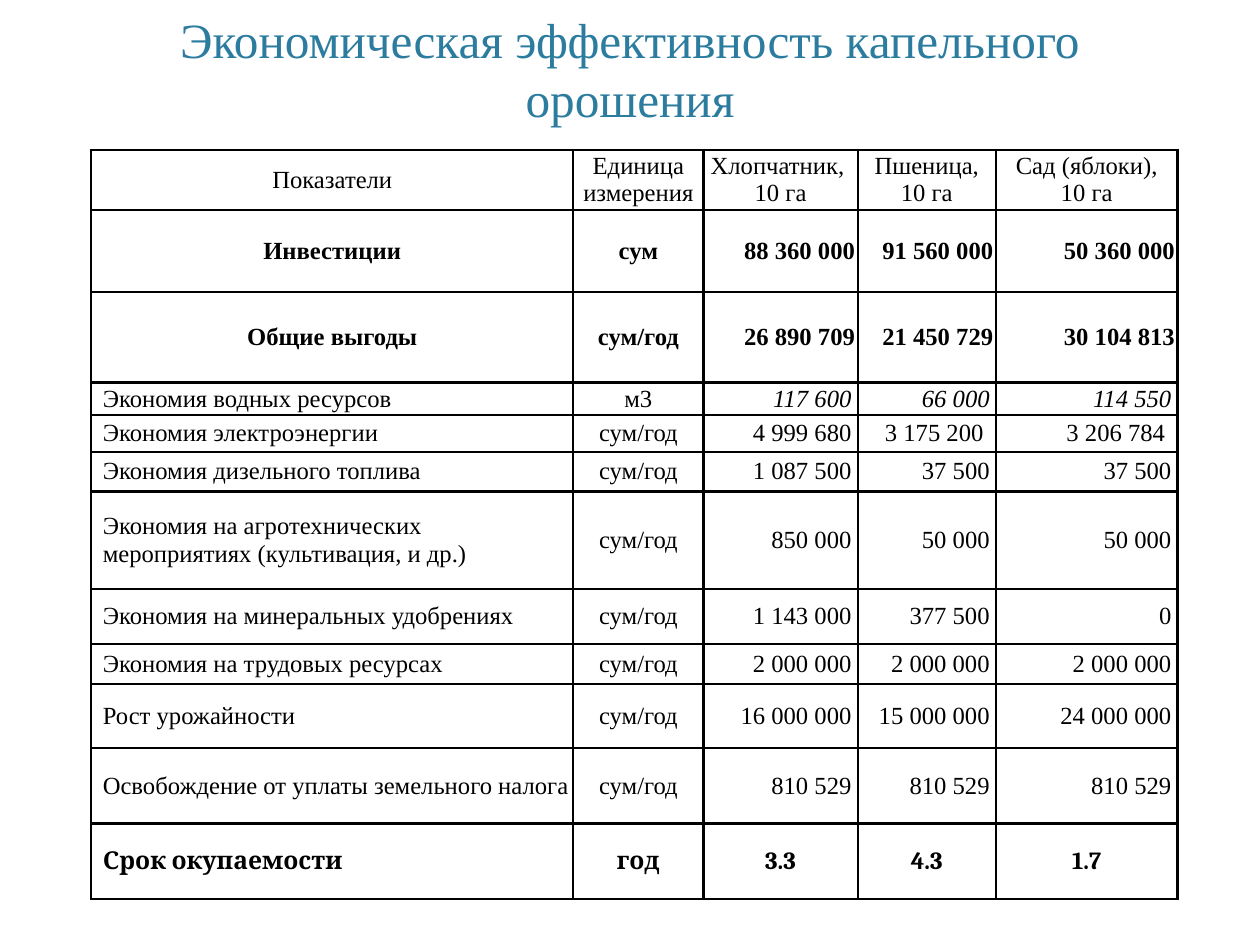
import pptx
import pptx.dml.color
import pptx.enum.text
import pptx.oxml
import pptx.oxml.ns
import pptx.util
from pptx.util import Inches

ALIGN = pptx.enum.text.PP_ALIGN
ANCHOR = pptx.enum.text.MSO_ANCHOR
SERIF = "Times New Roman"
INK = "000000"

COLS = [5.44, 1.47, 1.74, 1.56, 2.05]
HEIGHTS = [0.68, 0.93, 1.02, 0.37, 0.41, 0.45, 1.1, 0.62, 0.45, 0.73, 0.85, 0.85]

# Row kind, then the five cells
ROWS = [
    ("head", "Показатели", "Единица измерения", "Хлопчатник, \n10 га",
     "Пшеница,\n10 га", "Сад (яблоки),\n10 га"),
    ("sum", "Инвестиции", "сум", "88 360 000", "91 560 000", "50 360 000"),
    ("sum", "Общие выгоды", "сум/год", "26 890 709", "21 450 729", "30 104 813"),
    ("water", "Экономия водных ресурсов", "м3", "117 600", "66 000", "114 550"),
    ("item", "Экономия электроэнергии", "сум/год", "4 999 680", "3 175 200 ", "3 206 784 "),
    ("item", "Экономия дизельного топлива", "сум/год", "1 087 500", "37 500", "37 500"),
    ("item", "Экономия на агротехнических мероприятиях (культивация, и др.)",
     "сум/год", "850 000", "50 000", "50 000"),
    ("item", "Экономия на минеральных удобрениях", "сум/год", "1 143 000", "377 500", "0"),
    ("item", "Экономия на трудовых ресурсах", "сум/год", "2 000 000", "2 000 000", "2 000 000"),
    ("item", "Рост урожайности", "сум/год", "16 000 000", "15 000 000", "24 000 000"),
    ("item", "Освобождение от уплаты земельного налога", "сум/год",
     "810 529", "810 529", "810 529"),
    ("total", "Срок окупаемости", "год", "3.3", "4.3", "1.7"),
]


def color(code):
    return pptx.dml.color.RGBColor.from_string(code)


def add_run(para, text, size, code, face=SERIF, bold=False, slant=False):
    run = para.add_run()
    run.text = text
    font = run.font
    font.name = face
    font.size = pptx.util.Pt(size)
    font.bold = bold
    font.italic = slant
    font.color.rgb = color(code)


def add_title(slide):
    title = slide.shapes.title
    title.left, title.top = Inches(1.39), Inches(0.11)
    title.width, title.height = Inches(11.44), Inches(1.4)
    frame = title.text_frame
    frame.word_wrap = True
    frame.auto_size = pptx.enum.text.MSO_AUTO_SIZE.NONE
    frame.vertical_anchor = ANCHOR.BOTTOM
    frame.margin_left = frame.margin_right = Inches(0.14)
    frame.margin_top = frame.margin_bottom = Inches(0.07)
    para = frame.paragraphs[0]
    para.alignment = ALIGN.CENTER
    add_run(para, "Экономическая эффективность капельного орошения", 40, "2C7C9F")


def add_border(cell, code, width):
    props = cell._tc.get_or_add_tcPr()
    for side in ("lnL", "lnR", "lnT", "lnB"):
        props.append(pptx.oxml.parse_xml(
            f'<a:{side} {pptx.oxml.ns.nsdecls("a")} w="{pptx.util.Pt(width)}">'
            f'<a:solidFill><a:srgbClr val="{code}"/></a:solidFill></a:{side}>'))


def fill_cell(cell, text, kind, col):
    value = col > 1
    label = col == 0 and kind not in ("head", "sum")
    wide = value and kind in ("water", "item")

    # Frame of the cell
    add_border(cell, INK, 2)
    cell.fill.background()
    cell.vertical_anchor = ANCHOR.MIDDLE
    cell.margin_left = cell.margin_right = Inches(0.07 if wide else 0.03)
    cell.margin_top = cell.margin_bottom = Inches(0 if wide else 0.03)

    # Text of the cell
    if label:
        align = ALIGN.LEFT
    elif value and kind not in ("head", "total"):
        align = ALIGN.RIGHT
    else:
        align = ALIGN.CENTER
    frame = cell.text_frame
    for num, line in enumerate(text.split("\n")):
        para = frame.add_paragraph() if num else frame.paragraphs[0]
        para.alignment = align
        if label:
            para._p.get_or_add_pPr().set("marL", str(Inches(0.1)))
        add_run(para, line, 20, INK,
                face="Cambria" if kind == "total" else SERIF,
                bold=kind in ("sum", "total"),
                slant=value and kind == "water")


def add_grid(slide):
    grid = slide.shapes.add_table(
        len(ROWS), len(COLS), Inches(1.03), Inches(1.69),
        Inches(sum(COLS)), Inches(sum(HEIGHTS))).table
    grid.first_row = grid.horz_banding = False
    for column, width in zip(grid.columns, COLS):
        column.width = Inches(width)
    for row, height, (kind, *texts) in zip(grid.rows, HEIGHTS, ROWS):
        row.height = Inches(height)
        for col, text in enumerate(texts):
            fill_cell(row.cells[col], text, kind, col)


def main():
    deck = pptx.Presentation()
    deck.slide_width, deck.slide_height = Inches(14.22), Inches(10.67)
    slide = deck.slides.add_slide(deck.slide_layouts[5])
    add_title(slide)
    add_grid(slide)
    deck.save("out.pptx")


if __name__ == "__main__":
    main()
